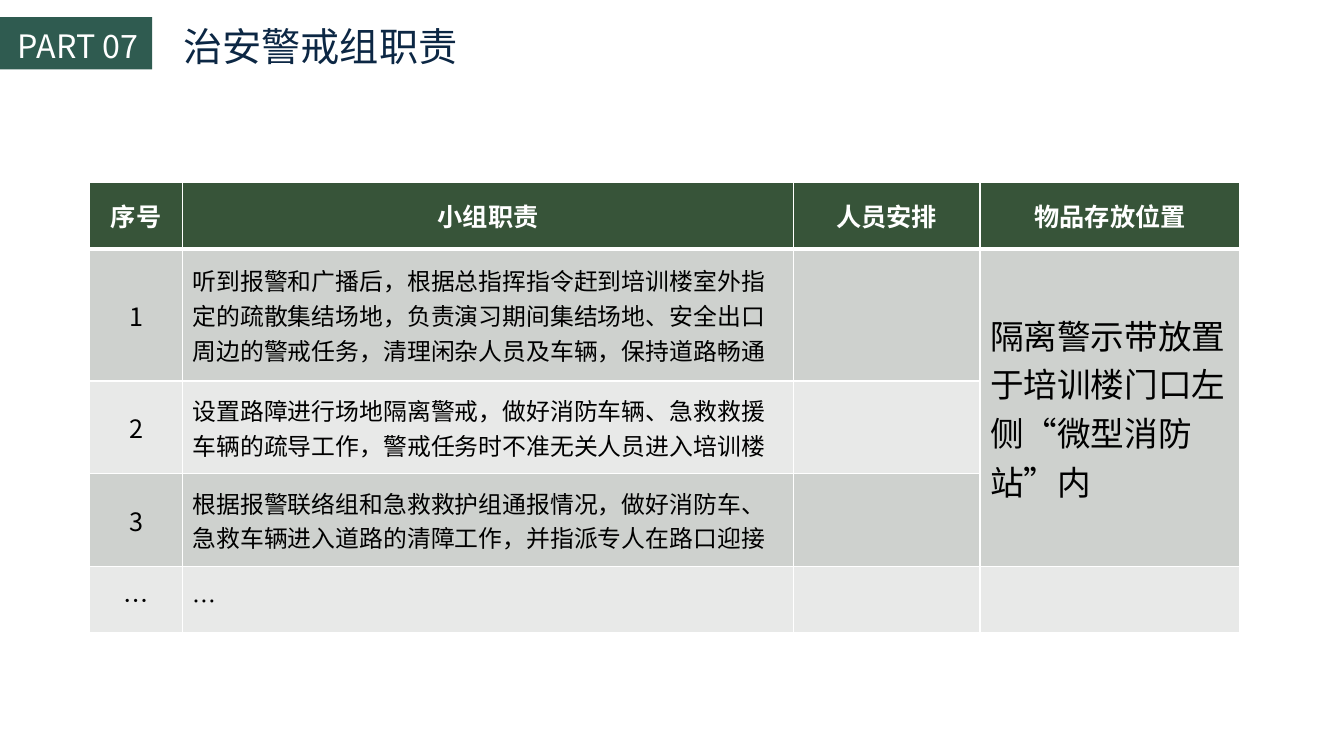
from lxml.etree import SubElement
from pptx import Presentation
from pptx.dml.color import RGBColor
from pptx.enum.shapes import MSO_SHAPE
from pptx.enum.text import MSO_ANCHOR, MSO_AUTO_SIZE, PP_ALIGN
from pptx.oxml.ns import qn
from pptx.util import Inches, Pt

WIDE, HIGH = Inches(13.33), Inches(7.5)
FACE = "Noto Sans CJK SC"
WHITE = RGBColor(0xFF, 0xFF, 0xFF)
BLACK = RGBColor(0, 0, 0)
NAVY = RGBColor(0x0C, 0x27, 0x44)
TEAL = RGBColor(0x2F, 0x5B, 0x50)
GREEN = RGBColor(0x37, 0x54, 0x39)
DARK = RGBColor(0xCE, 0xD1, 0xCE)
LIGHT = RGBColor(0xE8, 0xE9, 0xE8)

# Percent of the slide's width and height
COLS = [6.9, 45.46, 13.88, 19.35]
ROWS = [8.8, 17.47, 12.27, 12.27, 8.8]

HEAD = {"size": Pt(18), "bold": True, "color": WHITE}
INDEX = {"size": Pt(18), "bold": False, "color": BLACK}
DUTY = INDEX | {"size": Pt(17)}
PLACE = INDEX | {"size": Pt(24)}
TITLE = {"size": Pt(28), "color": NAVY}
PART = {"size": Pt(23), "color": WHITE}

HEADS = ["序号", "小组职责", "人员安排", "物品存放位置"]
DUTIES = [
    ("1", "听到报警和广播后，根据总指挥指令赶到培训楼室外指定的疏散集结场地，"
          "负责演习期间集结场地、安全出口周边的警戒任务，清理闲杂人员及车辆，保持道路畅通"),
    ("2", "设置路障进行场地隔离警戒，做好消防车辆、急救救援车辆的疏导工作，"
          "警戒任务时不准无关人员进入培训楼"),
    ("3", "根据报警联络组和急救救护组通报情况，做好消防车、急救车辆进入道路的清障工作，"
          "并指派专人在路口迎接"),
    ("…", "…"),
]
STORE = "隔离警示带放置于培训楼门口左侧“微型消防站”内"


def across(share):
    return int(WIDE * share / 100)


def down(share):
    return int(HIGH * share / 100)


def area(left, top, width, height):
    return across(left), down(top), across(width), down(height)


def write(frame, text, form, align=PP_ALIGN.LEFT):
    para = frame.paragraphs[0]
    para.alignment = align
    run = para.add_run()
    run.text = text
    run.font.name = FACE
    for key, value in form.items():
        if key == "color":
            run.font.color.rgb = value
        else:
            setattr(run.font, key, value)
    SubElement(run.font._element, qn("a:ea"), typeface=FACE)


def label(slide, box, text, form):
    frame = slide.shapes.add_textbox(*box).text_frame
    frame.word_wrap = False
    frame.auto_size = MSO_AUTO_SIZE.SHAPE_TO_FIT_TEXT
    write(frame, text, form)


def block(slide, box, color):
    shape = slide.shapes.add_shape(MSO_SHAPE.RECTANGLE, *box)
    shape.shadow.inherit = False
    shape.fill.solid()
    shape.fill.fore_color.rgb = color
    shape.line.fill.background()


def edge(cell, row):
    """Rule the cell in white, thicker between the head and the body."""
    thick = {(0, "B"), (1, "T")}
    for side in "LRTB":
        width = Pt(3 if (row, side) in thick else 1)
        line = SubElement(cell._tc.get_or_add_tcPr(), qn(f"a:ln{side}"), w=str(width))
        fill = SubElement(line, qn("a:solidFill"))
        SubElement(fill, qn("a:srgbClr"), val=str(WHITE))


def grid(slide, left, top):
    box = area(left, top, sum(COLS), sum(ROWS))
    table = slide.shapes.add_table(len(ROWS), len(COLS), *box).table
    for col, share in zip(table.columns, COLS):
        col.width = across(share)
    for num, (row, share) in enumerate(zip(table.rows, ROWS)):
        row.height = down(share)
        for cell in row.cells:
            edge(cell, num)
            cell.vertical_anchor = MSO_ANCHOR.MIDDLE
            cell.fill.solid()
            cell.fill.fore_color.rgb = (DARK if num % 2 else LIGHT) if num else GREEN
    return table


def fill(table):
    for col, text in enumerate(HEADS):
        write(table.cell(0, col).text_frame, text, HEAD, PP_ALIGN.CENTER)
    for row, (index, duty) in enumerate(DUTIES, 1):
        write(table.cell(row, 0).text_frame, index, INDEX, PP_ALIGN.CENTER)
        write(table.cell(row, 1).text_frame, duty, DUTY)
    table.cell(1, 3).merge(table.cell(3, 3))
    write(table.cell(1, 3).text_frame, STORE, PLACE)


def main():
    deck = Presentation()
    deck.slide_width, deck.slide_height = WIDE, HIGH
    slide = deck.slides.add_slide(deck.slide_layouts[6])
    fill(grid(slide, 6.68, 24.13))
    label(slide, area(12.9, 2.27, 22.06, 7.6), "治安警戒组职责", TITLE)
    block(slide, area(0, 2.27, 11.33, 6.93), TEAL)
    label(slide, area(0.6, 2.8, 10.88, 6.4), "PART 07", PART)
    deck.save("out.pptx")


if __name__ == "__main__":
    main()
